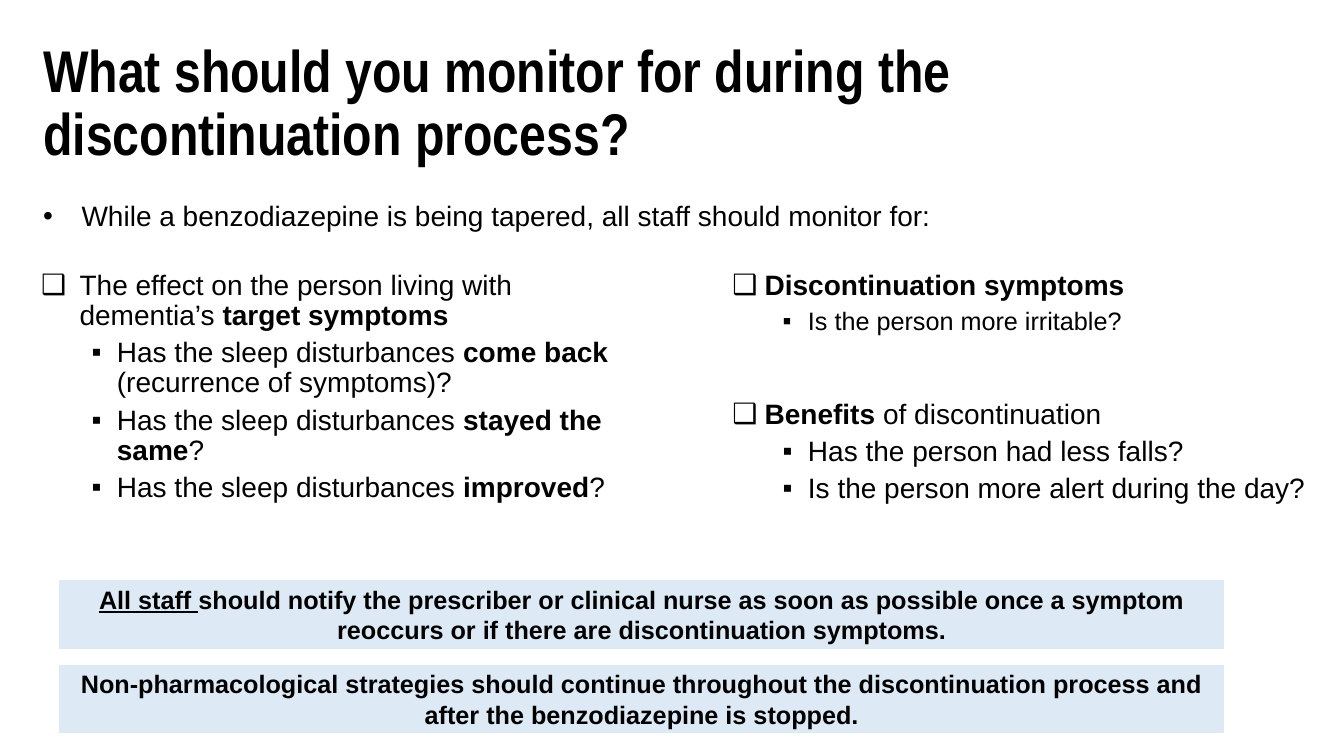
from dataclasses import dataclass

from lxml import etree
from pptx import Presentation
from pptx.dml.color import RGBColor
from pptx.enum.shapes import MSO_SHAPE
from pptx.enum.text import MSO_ANCHOR, PP_ALIGN
from pptx.oxml.ns import qn
from pptx.util import Inches, Pt

RECTANGLE = MSO_SHAPE.RECTANGLE
TOP, MIDDLE = MSO_ANCHOR.TOP, MSO_ANCHOR.MIDDLE
LEFT, CENTER = PP_ALIGN.LEFT, PP_ALIGN.CENTER
BLACK, WHITE, PALE_BLUE = "000000", "FFFFFF", "DDEAF6"
PAGE_WIDTH, PAGE_HEIGHT = Inches(13.33), Inches(7.5)
COLUMN, ROW = PAGE_WIDTH / 100, PAGE_HEIGHT / 100


@dataclass(frozen=True)
class Area:
    column: float
    row: float
    columns: float
    rows: float


@dataclass(frozen=True)
class Bullet:
    symbol: str
    margin: float
    hang: float
    level: int = 0


@dataclass(frozen=True)
class Span:
    text: str
    bold: bool = False
    underline: bool = False


@dataclass(frozen=True)
class Item:
    spans: tuple[Span, ...]
    bullet: Bullet | None = None
    size: float = 20
    before: float = 0


@dataclass(frozen=True)
class Block:
    area: Area
    items: tuple[Item, ...]


DOT = Bullet("•", 0.38, 0.38)
LEFT_CHECK = Bullet("❑", 0.38, 0.38)
LEFT_SQUARE = Bullet("▪", 0.75, 0.25, 1)
RIGHT_CHECK = Bullet("❑", 0.82, 0.32, 1)
RIGHT_SQUARE = Bullet("▪", 1.25, 0.25, 2)
SLEEP = Span("Has the sleep disturbances ")

TITLE = Block(Area(2.48, 4.8, 69.92, 10.8), (
    Item((Span("What should you monitor for during the discontinuation process?", True),), size=42),
))

BODY = (
    Block(Area(2.48, 26.13, 87.6, 5.33), (
        Item((Span("While a benzodiazepine is being tapered, all staff should monitor for:"),), DOT),
    )),
    Block(Area(2.33, 35.2, 44.1, 34.53), (
        Item((Span("The effect on the person living with dementia’s "),
              Span("target symptoms", True)), LEFT_CHECK),
        Item((SLEEP, Span("come back ", True), Span("(recurrence of symptoms)?")),
             LEFT_SQUARE, before=5),
        Item((SLEEP, Span("stayed the same", True), Span("?")), LEFT_SQUARE, before=5),
        Item((SLEEP, Span("improved", True), Span("?")), LEFT_SQUARE, before=5),
    )),
    Block(Area(50, 35.2, 48.9, 50.8), (
        Item((Span("Discontinuation symptoms", True),), RIGHT_CHECK),
        Item((Span("Is the person more irritable?"),), RIGHT_SQUARE, 18, 5),
        Item((Span("Benefits", True), Span(" of discontinuation")), RIGHT_CHECK, before=46),
        Item((Span("Has the person had less falls?"),), RIGHT_SQUARE, before=5),
        Item((Span("Is the person more alert during the day?"),), RIGHT_SQUARE, before=5),
    )),
)

BANNER_ROW, BANNER_STEP = 76.53, 11.2
BANNERS = (
    (Span("All staff ", True, True),
     Span("should notify the prescriber or clinical nurse as soon as possible once a symptom "
          "reoccurs or if there are discontinuation symptoms.", True)),
    (Span("Non-pharmacological strategies should continue throughout the discontinuation process "
          "and after the benzodiazepine is stopped.", True),),
)


def color(value: str) -> RGBColor:
    return RGBColor.from_string(value)


def place(area: Area) -> tuple[int, int, int, int]:
    return (round(area.column * COLUMN), round(area.row * ROW),
            round(area.columns * COLUMN), round(area.rows * ROW))


def add_bullet(para, bullet: Bullet) -> None:
    para.level = bullet.level
    properties = para._p.get_or_add_pPr()
    properties.set("marL", str(Inches(bullet.margin)))
    properties.set("indent", str(-Inches(bullet.hang)))
    tint = etree.SubElement(properties, qn("a:buClr"))
    etree.SubElement(tint, qn("a:srgbClr"), val=BLACK)
    etree.SubElement(properties, qn("a:buFont"), typeface="Arial")
    etree.SubElement(properties, qn("a:buChar"), char=bullet.symbol)


def write(frame, items: tuple[Item, ...], *, font: str = "Arial", align=LEFT,
          anchor=TOP, spacing: float = 0.9) -> None:
    frame.word_wrap = True
    frame.vertical_anchor = anchor
    for index, item in enumerate(items):
        para = frame.add_paragraph() if index else frame.paragraphs[0]
        if item.bullet:
            add_bullet(para, item.bullet)
        para.alignment = align
        para.line_spacing = spacing
        para.space_before = Pt(item.before)
        for part in item.spans:
            span = para.add_run()
            span.text = part.text
            span.font.name = font
            span.font.size = Pt(item.size)
            span.font.bold = part.bold
            span.font.underline = part.underline
            span.font.color.rgb = color(BLACK)


def add_text(page, block: Block, **style) -> None:
    box = page.shapes.add_textbox(*place(block.area))
    write(box.text_frame, block.items, **style)


def add_banner(page, area: Area, spans: tuple[Span, ...]) -> None:
    box = page.shapes.add_shape(RECTANGLE, *place(area))
    box.shadow.inherit = False
    box.fill.solid()
    box.fill.fore_color.rgb = color(PALE_BLUE)
    box.line.color.rgb = color(WHITE)
    box.line.width = Pt(2.25)
    write(box.text_frame, (Item(spans, size=18),), align=CENTER, anchor=MIDDLE, spacing=1.0)


def main() -> None:
    deck = Presentation()
    deck.slide_width, deck.slide_height = PAGE_WIDTH, PAGE_HEIGHT
    page = deck.slides.add_slide(deck.slide_layouts[6])
    add_text(page, TITLE, font="Arial Narrow")
    for index, spans in enumerate(BANNERS):
        add_banner(page, Area(4.28, BANNER_ROW + index * BANNER_STEP, 86.95, 9.47), spans)
    for block in BODY:
        add_text(page, block)
    deck.save("out.pptx")


if __name__ == "__main__":
    main()
